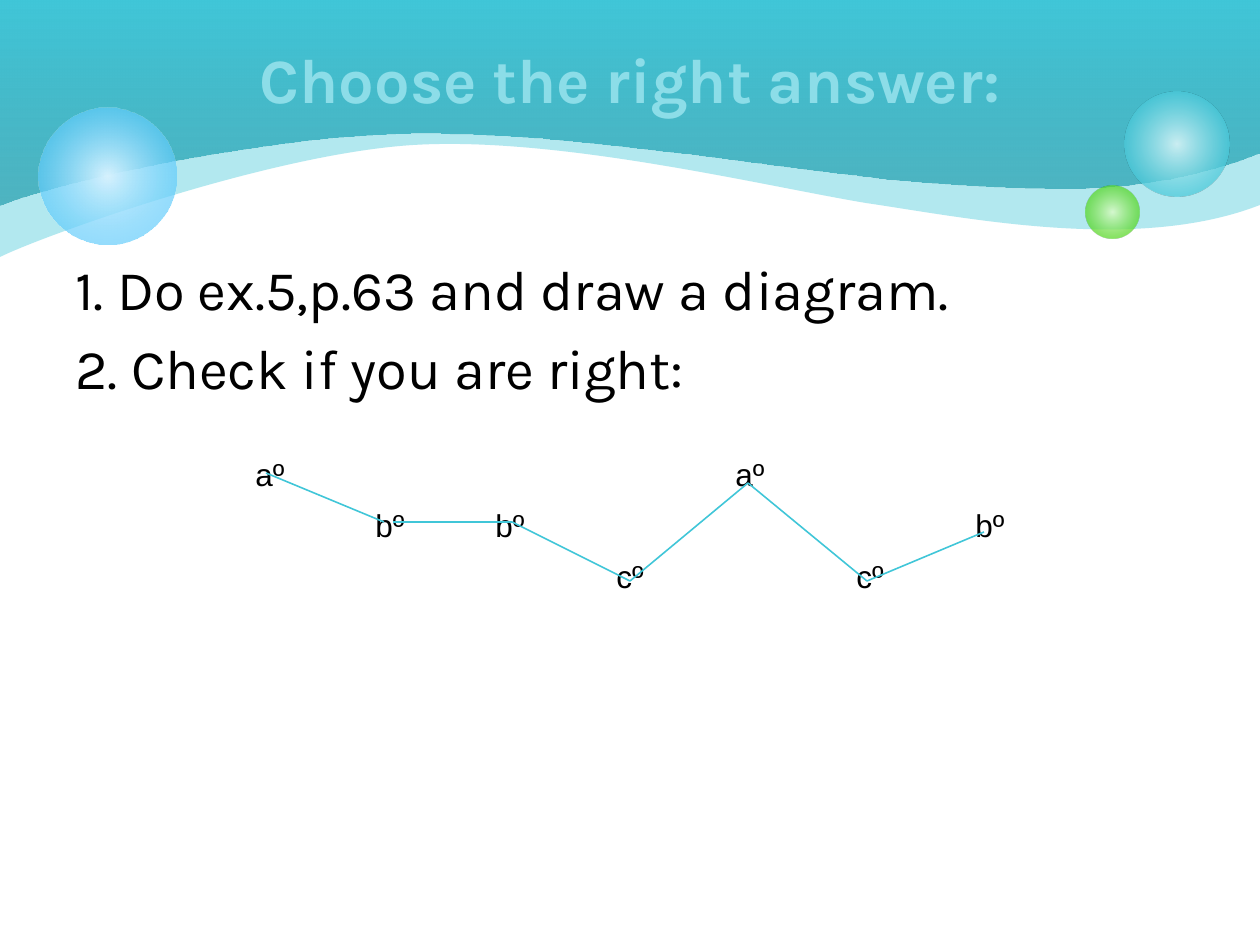
from lxml import etree
from pptx import Presentation
from pptx import util as u
from pptx.dml.color import RGBColor
from pptx.enum import shapes, text
from pptx.oxml import ns

PX = 914400 / 126

THEME = {
    "title": "8CDDE8", "ink": "000000", "accent": "40C6D8",
    "heading_font": "Karla", "table_font": "Arial",
    "title_size": 36, "body_size": 32, "note_size": 18,
    "body_gap": 7, "line_width": 0.9,
}

# Content
TITLE = "Choose the right answer:"
TASKS = ["1. Do ex.5,p.63 and draw a diagram.", "2. Check if you are right:"]
ANSWERS = [
    ["aº", "", "", "", "aº", "", ""],
    ["", "bº", "bº", "", "", "", "bº"],
    ["", "", "", "cº", "", "cº", ""],
]
TABLE_LEFT, TABLE_TOP, COLUMN_WIDTH = 210, 452, 120
ROW_HEIGHTS = [51, 50, 50]
LINKS = [
    ((266, 473), (384, 522)), ((393, 522), (512, 522)),
    ((512, 522), (630, 581)), ((630, 581), (748, 483)),
    ((748, 483), (867, 581)), ((867, 581), (984, 532)),
]

# Header: Bezier points of each outline after the top left corner, then the
# fill stops as (position %, colour, opacity %); one stop is a plain fill
WAVES = [
    ([(0, 68), (0, 189), (0, 257),
      (42, 236), (270, 154), (413, 145), (558, 136), (764, 186),
      (866, 203), (968, 218), (1137, 253), (1260, 205)],
     [(0, "40C6D8", 40)]),
    ([(0, 68), (0, 136), (0, 205),
      (57, 182), (256, 137), (411, 133), (566, 129), (829, 176),
      (929, 182), (1028, 188), (1137, 201), (1260, 153)],
     [(0, "249EAE", 69), (100, "40C6D8", 100)]),
]
BUBBLES = [  # left, top, diameter, stops
    (1125, 92, 104, [(0, "D9F4F7", 90), (76, "40C6D8", 70)]),
    (1086, 186, 53, [(0, "DAFACD", 90), (76, "4CD416", 70)]),
    (39, 108, 137, [(0, "D6F2FE", 100), (100, "33BDFB", 54)]),
]


def px(*values):
    return [u.Emu(round(value * PX)) for value in values]


def child(parent, tag, **attributes):
    element = etree.SubElement(parent, ns.qn(tag))
    for name, value in attributes.items():
        element.set(name, str(value))
    return element


def paint(shape, stops, angle=None):
    """Fill with one colour, a linear gradient, or a radial one (no angle)."""
    shape.shadow.inherit = False
    shape.line.fill.background()
    if len(stops) == 1:
        _, colour, opacity = stops[0]
        shape.fill.solid()
        shape.fill.fore_color.rgb = RGBColor.from_string(colour)
        tint = shape._element.spPr.find(ns.qn("a:solidFill"))[0]
        child(tint, "a:alpha", val=opacity * 1000)
        return
    shape.fill.gradient()
    gradient = shape._element.spPr.find(ns.qn("a:gradFill"))
    for old in list(gradient):
        gradient.remove(old)
    stop_list = child(gradient, "a:gsLst")
    for position, colour, opacity in stops:
        stop = child(stop_list, "a:gs", pos=position * 1000)
        tint = child(stop, "a:srgbClr", val=colour)
        child(tint, "a:alpha", val=opacity * 1000)
    if angle is None:
        focus = child(gradient, "a:path", path="circle")
        child(focus, "a:fillToRect", l=50000, t=50000, r=50000, b=50000)
    else:
        child(gradient, "a:lin", ang=angle * 60000, scaled=0)


def bend(shape, count):
    """Turn each three of the first count segments into one Bezier curve."""
    segments = list(shape._element.iter(ns.qn("a:lnTo")))[:count]
    for start in range(0, count, 3):
        first, *others = segments[start:start + 3]
        curve = etree.Element(ns.qn("a:cubicBezTo"))
        first.addprevious(curve)
        for segment in (first, *others):
            curve.append(segment[0])
            segment.getparent().remove(segment)


def add_span(para, words, font, size, colour, bold=False):
    span = para.add_run()
    span.text = words
    span.font.name = THEME[font]
    span.font.size = u.Pt(THEME[size])
    span.font.bold = bold
    span.font.color.rgb = RGBColor.from_string(THEME[colour])


def add_header(page):
    for points, stops in WAVES:
        outline = page.shapes.build_freeform(0, 0)
        outline.add_line_segments(
            [px(*point) for point in [*points, (1261, 0)]], close=True)
        wave = outline.convert_to_shape()
        bend(wave, len(points))
        paint(wave, stops, angle=270)
    for left, top, size, stops in BUBBLES:
        bubble = page.shapes.add_shape(
            shapes.MSO_SHAPE.OVAL, *px(left, top, size, size))
        paint(bubble, stops)


def add_title(page):
    title = page.shapes.title
    title.left, title.top, title.width, title.height = px(63, 0, 1134, 157)
    frame = title.text_frame
    frame.auto_size = text.MSO_AUTO_SIZE.NONE
    frame.vertical_anchor = text.MSO_ANCHOR.MIDDLE
    para = frame.paragraphs[0]
    para.alignment = text.PP_ALIGN.CENTER
    add_span(para, TITLE, "heading_font", "title_size", "title", bold=True)
    page.shapes._spTree.append(title._element)  # in front of the header


def add_tasks(page):
    box = page.shapes.add_textbox(*px(63, 248, 1134, 624))
    frame = box.text_frame
    frame.word_wrap = True
    for index, task in enumerate(TASKS):
        para = frame.add_paragraph() if index else frame.paragraphs[0]
        para.space_before = u.Pt(THEME["body_gap"] if index else 0)
        add_span(para, task, "heading_font", "body_size", "ink")


def add_answers(page):
    columns = len(ANSWERS[0])
    table = page.shapes.add_table(
        len(ANSWERS), columns,
        *px(TABLE_LEFT, TABLE_TOP, COLUMN_WIDTH * columns, sum(ROW_HEIGHTS))).table
    table.first_row = table.horz_banding = False
    for column in table.columns:
        column.width = px(COLUMN_WIDTH)[0]
    for row, height, words in zip(table.rows, ROW_HEIGHTS, ANSWERS):
        row.height = px(height)[0]
        for cell, word in zip(row.cells, words):
            cell.fill.background()
            para = cell.text_frame.paragraphs[0]
            para.alignment = text.PP_ALIGN.CENTER
            if word:
                add_span(para, word, "table_font", "note_size", "ink")


def add_links(page):
    for start, end in LINKS:
        link = page.shapes.add_connector(
            shapes.MSO_CONNECTOR.STRAIGHT, *px(*start, *end))
        link.line.color.rgb = RGBColor.from_string(THEME["accent"])
        link.line.width = u.Pt(THEME["line_width"])
        child(link._element.spPr, "a:effectLst")


def main():
    deck = Presentation()
    deck.slide_width, deck.slide_height = px(1260, 945)
    page = deck.slides.add_slide(deck.slide_layouts[5])
    add_header(page)
    add_title(page)
    add_tasks(page)
    add_answers(page)
    add_links(page)
    deck.save("out.pptx")


if __name__ == "__main__":
    main()
